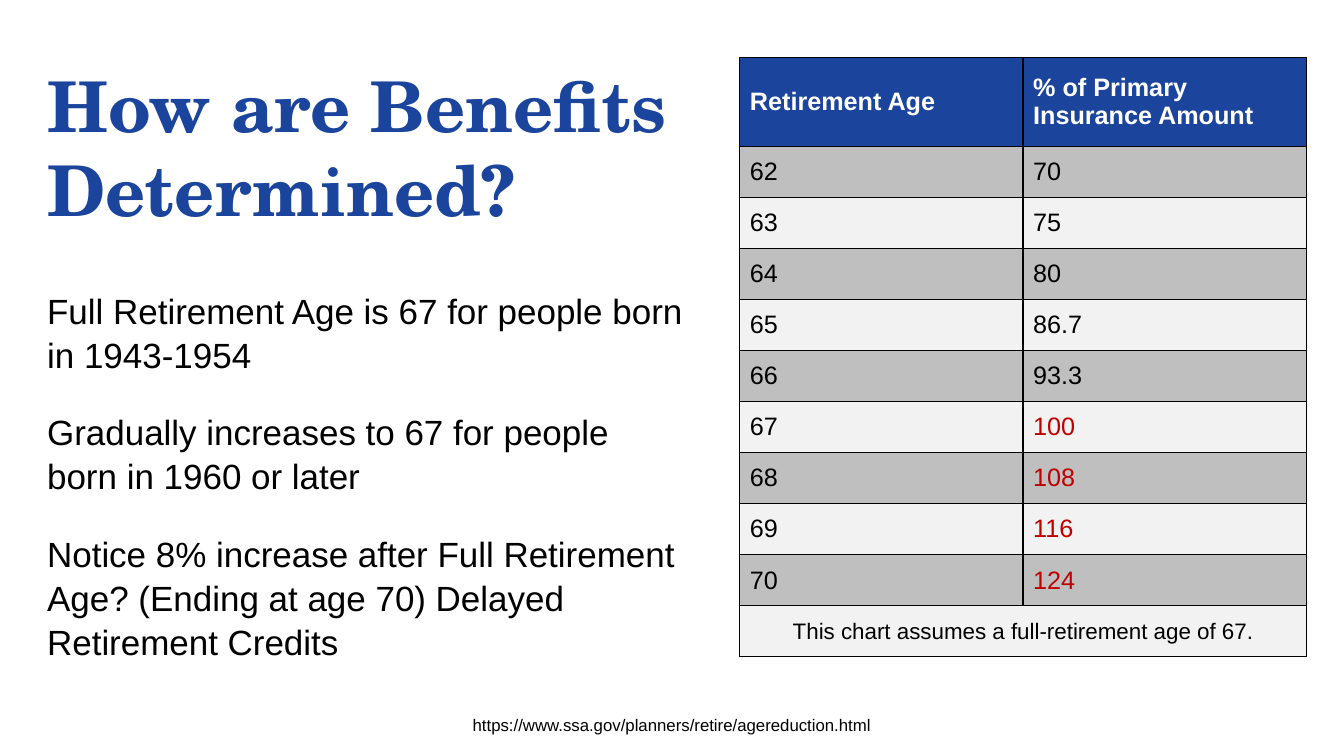
from lxml.etree import SubElement
from pptx import Presentation
from pptx.dml.color import RGBColor
from pptx.enum.text import MSO_ANCHOR as Anchor, MSO_AUTO_SIZE as AutoSize, PP_ALIGN as Align
from pptx.oxml.ns import qn
from pptx.util import Pt

COLORS = {
    "blue": "1B449C",
    "black": "000000",
    "white": "FFFFFF",
    "red": "C00000",
    "dark_band": "BFBFBF",
    "light_band": "F2F2F2",
}
TITLE_FONT = "TeX Gyre Schola"
BODY_FONT = "Arial"

LEFT, TOP, TEXT_WIDTH = 26.6, 41, 470
SLIDE_WIDTH, SLIDE_HEIGHT = 960, 540
TABLE_LEFT, COLUMN_WIDTH = 528.5, 202.3
HEADER_HEIGHT, ROW_HEIGHT = 63.4, 36.5
FULL_RETIREMENT_AGE = 67

STATEMENTS = [
    "Full Retirement Age is 67 for people born in 1943-1954",
    "Gradually increases to 67 for people born in 1960 or later",
    "Notice 8% increase after Full Retirement Age? "
    "(Ending at age 70) Delayed Retirement Credits",
]
HEADERS = ["Retirement Age", "% of Primary Insurance Amount"]
BENEFITS = {62: "70", 63: "75", 64: "80", 65: "86.7", 66: "93.3",
            67: "100", 68: "108", 69: "116", 70: "124"}
TABLE_NOTE = "This chart assumes a full-retirement age of 67."
SOURCE_LINK = "https://www.ssa.gov/planners/retire/agereduction.html"


def rgb(color):
    return RGBColor.from_string(COLORS[color])


def add_run(paragraph, text, size, color="black", bold=False, font=BODY_FONT):
    run = paragraph.add_run()
    run.text = text
    run.font.name = font
    run.font.size = Pt(size)
    run.font.bold = bold
    run.font.color.rgb = rgb(color)


def format_title(title, text):
    title.left, title.top = Pt(LEFT), Pt(TOP)
    title.width, title.height = Pt(TEXT_WIDTH), Pt(128)
    frame = title.text_frame
    frame.word_wrap = True
    frame.auto_size = AutoSize.SHAPE_TO_FIT_TEXT
    frame.vertical_anchor = Anchor.TOP
    paragraph = frame.paragraphs[0]
    paragraph.alignment = Align.LEFT
    add_run(paragraph, text, 50, "blue", True, TITLE_FONT)


def add_text(slide, box, texts, size, align=Align.LEFT, line_spacing=1.0, gap=0):
    shape = slide.shapes.add_textbox(*map(Pt, box))
    frame = shape.text_frame
    frame.word_wrap = True
    frame.auto_size = AutoSize.SHAPE_TO_FIT_TEXT
    for index, text in enumerate(texts):
        paragraph = frame.add_paragraph() if index else frame.paragraphs[0]
        paragraph.alignment = align
        paragraph.line_spacing = line_spacing
        paragraph.space_before = Pt(gap if index else 0)
        add_run(paragraph, text, size)


def style_cell(cell, fill):
    # Borders must come before the fill in the cell properties
    properties = cell._tc.get_or_add_tcPr()
    for side in ("a:lnL", "a:lnR", "a:lnT", "a:lnB"):
        line = SubElement(properties, qn(side), w=str(Pt(1)))
        solid = SubElement(line, qn("a:solidFill"))
        SubElement(solid, qn("a:srgbClr"), val=COLORS["black"])
    cell.fill.solid()
    cell.fill.fore_color.rgb = rgb(fill)
    cell.vertical_anchor = Anchor.MIDDLE


def add_benefit_table(slide):
    row_count = len(BENEFITS) + 2
    height = HEADER_HEIGHT + ROW_HEIGHT * (row_count - 1)
    frame = slide.shapes.add_table(row_count, 2, Pt(TABLE_LEFT), Pt(TOP),
                                   Pt(2 * COLUMN_WIDTH), Pt(height))
    table = frame.table
    for column in table.columns:
        column.width = Pt(COLUMN_WIDTH)
    for index, row in enumerate(table.rows):
        row.height = Pt(ROW_HEIGHT if index else HEADER_HEIGHT)
        band = "dark_band" if index % 2 else "light_band"
        for cell in row.cells:
            style_cell(cell, band if index else "blue")

    # Header row
    for cell, header in zip(table.rows[0].cells, HEADERS):
        add_run(cell.text_frame.paragraphs[0], header, 18, "white", True)

    # One row for each age, red from full retirement age on
    for index, (age, percent) in enumerate(BENEFITS.items(), start=1):
        percent_color = "red" if age >= FULL_RETIREMENT_AGE else "black"
        add_run(table.cell(index, 0).text_frame.paragraphs[0], str(age), 18)
        add_run(table.cell(index, 1).text_frame.paragraphs[0], percent, 18, percent_color)

    # Note across both columns
    note = table.cell(row_count - 1, 0)
    note.merge(table.cell(row_count - 1, 1))
    paragraph = note.text_frame.paragraphs[0]
    paragraph.alignment = Align.CENTER
    add_run(paragraph, TABLE_NOTE, 16)


def main():
    presentation = Presentation()
    presentation.slide_width = Pt(SLIDE_WIDTH)
    presentation.slide_height = Pt(SLIDE_HEIGHT)
    slide = presentation.slides.add_slide(presentation.slide_layouts[5])

    # Left side: title and statements
    format_title(slide.shapes.title, "How are Benefits Determined?")
    add_text(slide, (LEFT, 201.6, TEXT_WIDTH, 268), STATEMENTS, 25,
             line_spacing=1.05, gap=24)

    # Source at the bottom
    add_text(slide, (0, 507, SLIDE_WIDTH, 21.6), [SOURCE_LINK], 12, Align.CENTER)

    # Right side: benefits by age
    add_benefit_table(slide)
    presentation.save("out.pptx")


if __name__ == "__main__":
    main()
